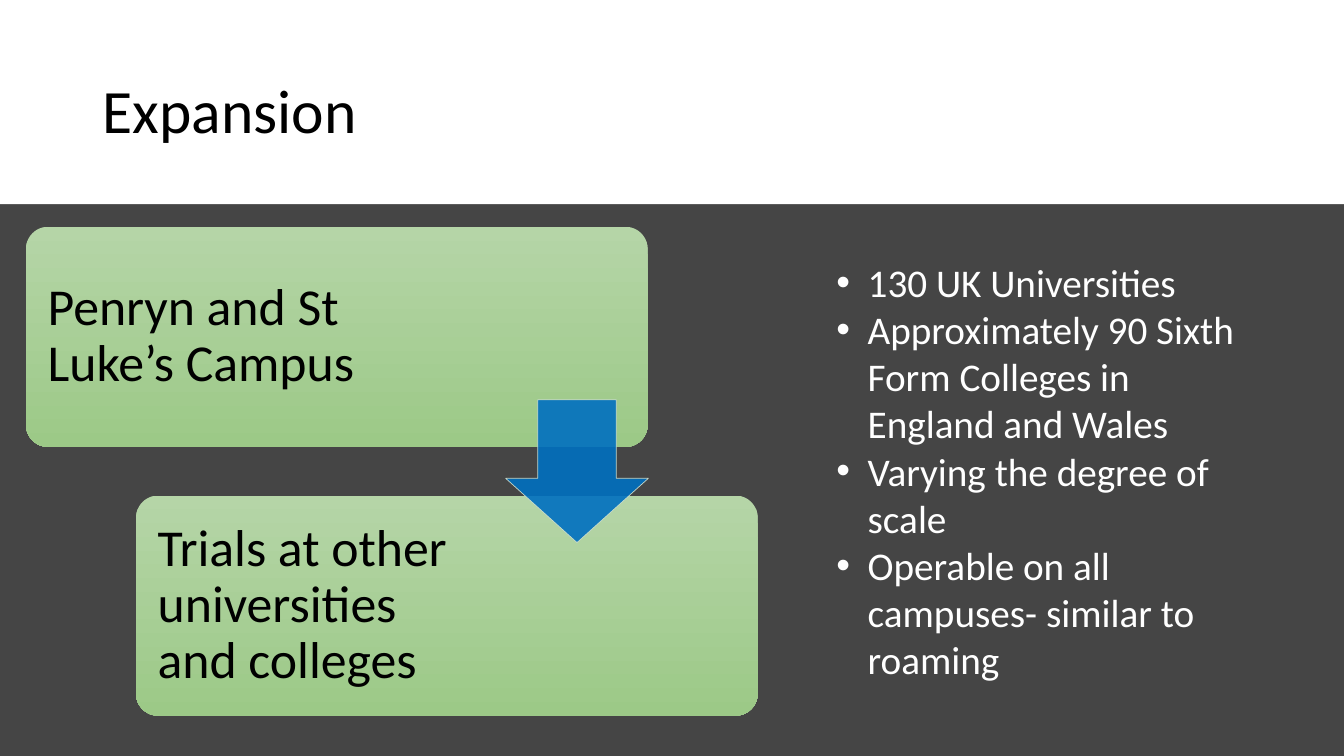
"""Build the Expansion slide: two roll-out steps beside a list of target sites."""
from lxml import etree
from pptx import Presentation, util as u
from pptx.dml.color import RGBColor
from pptx.enum import shapes, text
from pptx.oxml import ns

CELL = u.Inches(1 / 12)
COLUMNS, ROWS = 160, 90
COLORS = {
    "ground": "454545", "band": "FFFFFF", "dark": "000000", "light": "FFFFFF",
    "step_top": "B5D5A7", "step_bottom": "9CC987",
    "arrow": "0070C0", "arrow_edge": "D5E3CF",
}
STEPS = [
    ("Penryn and St Luke’s Campus", 27.4),
    ("Trials at other universities and colleges", 31.9),
]
REACH = [
    "130 UK Universities",
    "Approximately 90 Sixth Form Colleges in England and Wales",
    "Varying the degree of scale",
    "Operable on all campuses- similar to roaming",
]


def cells(*counts):
    """Convert grid counts to lengths."""
    return [u.Emu(round(count * CELL)) for count in counts]


def rgb(name):
    """Look up a named colour."""
    return RGBColor.from_string(COLORS[name])


def write(frame, lines, size, color, spacing=1.0, bullet=False,
          anchor=text.MSO_ANCHOR.MIDDLE):
    """Fill a text frame with one paragraph per line."""
    frame.word_wrap = True
    frame.vertical_anchor = anchor
    for index, line in enumerate(lines):
        paragraph = frame.add_paragraph() if index else frame.paragraphs[0]
        paragraph.text = line
        paragraph.alignment = text.PP_ALIGN.LEFT
        paragraph.line_spacing = spacing
        if bullet:
            properties = paragraph._p.get_or_add_pPr()
            properties.set("marL", str(u.Inches(0.31)))
            properties.set("indent", str(-u.Inches(0.31)))
            font = etree.SubElement(properties, ns.qn("a:buFont"))
            font.set("typeface", "Arial")
            etree.SubElement(properties, ns.qn("a:buChar")).set("char", "•")
        paragraph.font.name = "Calibri"
        paragraph.font.size = u.Pt(size)
        paragraph.font.color.rgb = rgb(color)


def add_block(slide, kind, box, color=None):
    """Add a flat preset shape without outline."""
    block = slide.shapes.add_shape(kind, *cells(*box))
    block.shadow.inherit = False
    block.line.fill.background()
    if color:
        block.fill.solid()
        block.fill.fore_color.rgb = rgb(color)
    return block


def add_title(slide, title):
    """Place the title on its white band."""
    heading = slide.shapes.title
    heading.left, heading.top, heading.width, heading.height = cells(11, 4.8, 138, 17.4)
    write(heading.text_frame, [title], 44, "dark", spacing=0.9)
    band = add_block(slide, shapes.MSO_SHAPE.RECTANGLE, (0, 0, COLUMNS, 24.3), "band")
    heading.element.addprevious(band.element)


def add_step(slide, position, label, right_margin):
    """Add one step of the descending staircase."""
    box = (3.1 + 13.1 * position, 27 + 32 * position, 74, 26.2)
    step = add_block(slide, shapes.MSO_SHAPE.ROUNDED_RECTANGLE, box)
    step.adjustments[0] = 0.1
    step.fill.gradient()
    step.fill.gradient_angle = 270
    for stop, color in zip(step.fill.gradient_stops, ("step_top", "step_bottom")):
        stop.color.rgb = rgb(color)
    frame = step.text_frame
    frame.margin_left, frame.margin_right = cells(1.8, right_margin)
    write(frame, [label], 37, "dark", spacing=0.9)


def add_arrow(slide):
    """Add the translucent arrow that links the steps."""
    arrow = add_block(slide, shapes.MSO_SHAPE.DOWN_ARROW, (60.2, 47.6, 17, 17), "arrow")
    arrow.adjustments[0], arrow.adjustments[1] = 0.55, 0.45
    arrow.line.color.rgb = rgb("arrow_edge")
    arrow.line.width = u.Pt(0.5)
    for color in arrow.element.spPr.iter(ns.qn("a:srgbClr")):
        etree.SubElement(color, ns.qn("a:alpha")).set("val", "90000")


def add_reach(slide):
    """Add the bulleted list of target sites."""
    reach = slide.shapes.add_textbox(*cells(98.4, 30.2, 52, 52.1))
    write(reach.text_frame, REACH, 28, "light", bullet=True,
          anchor=text.MSO_ANCHOR.TOP)


def main():
    """Assemble and save the slide."""
    deck = Presentation()
    deck.slide_width, deck.slide_height = cells(COLUMNS, ROWS)
    slide = deck.slides.add_slide(deck.slide_layouts[5])
    slide.background.fill.solid()
    slide.background.fill.fore_color.rgb = rgb("ground")
    add_title(slide, "Expansion")
    for position, (label, right_margin) in enumerate(STEPS):
        add_step(slide, position, label, right_margin)
    add_arrow(slide)
    add_reach(slide)
    deck.save("out.pptx")


if __name__ == "__main__":
    main()
